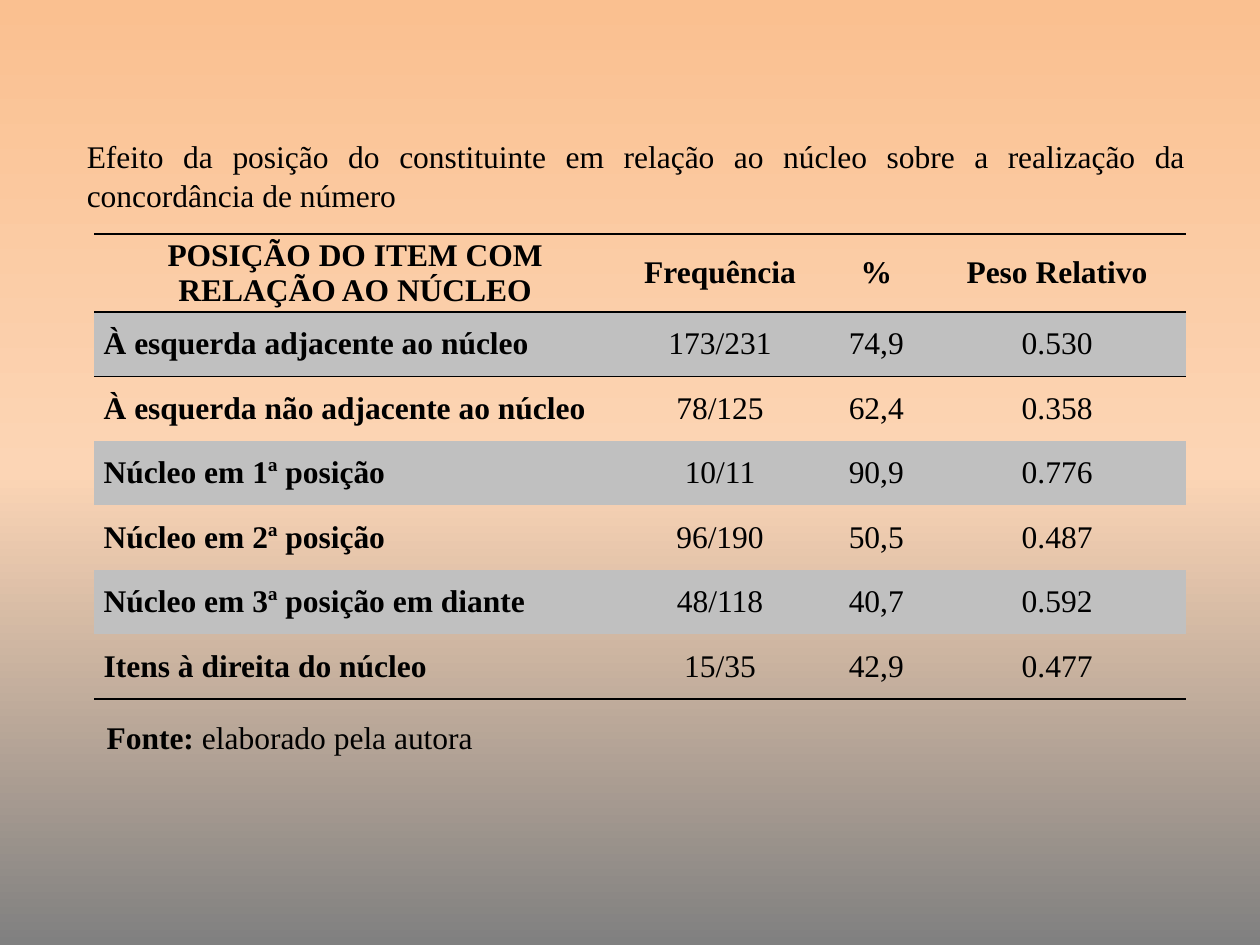
from copy import deepcopy

from lxml import etree
from pptx import Presentation
from pptx.dml.color import RGBColor
from pptx.enum.text import MSO_ANCHOR, PP_ALIGN
from pptx.oxml.ns import qn
from pptx.util import Cm, Pt

MIDDLE = MSO_ANCHOR.MIDDLE
LEFT, CENTER, JUSTIFY = PP_ALIGN.LEFT, PP_ALIGN.CENTER, PP_ALIGN.JUSTIFY

BLACK = RGBColor(0x00, 0x00, 0x00)
BAND_GRAY = RGBColor(0xC0, 0xC0, 0xC0)
GRADIENT = [
    (0, RGBColor(0xFA, 0xC0, 0x90)),
    (0.5, RGBColor(0xFC, 0xD5, 0xB5)),
    (1, RGBColor(0x80, 0x80, 0x80)),
]

FONT_NAME = "Times New Roman"
FONT_SIZE = Pt(18)
NO_STYLE_NO_GRID = "{2D5ABB26-0587-4C30-8999-92F81FD0307C}"

COLUMN_WIDTHS = [Cm(10.52), Cm(4.19), Cm(2.11), Cm(5.18)]
HEADER_HEIGHT, ROW_HEIGHT = Cm(1.57), Cm(1.3)
ROWS = [
    ("POSIÇÃO DO ITEM COM RELAÇÃO AO NÚCLEO", "Frequência", "%", "Peso Relativo"),
    ("À esquerda adjacente ao núcleo", "173/231", "74,9", "0.530"),
    ("À esquerda não adjacente ao núcleo", "78/125", "62,4", "0.358"),
    ("Núcleo em 1ª posição", "10/11", "90,9", "0.776"),
    ("Núcleo em 2ª posição", "96/190", "50,5", "0.487"),
    ("Núcleo em 3ª posição em diante", "48/118", "40,7", "0.592"),
    ("Itens à direita do núcleo", "15/35", "42,9", "0.477"),
]


def set_background(slide):
    fill = slide.background.fill
    fill.gradient()
    fill.gradient_angle = 270
    # The default gradient has two stops; a third one is added
    stop_list = slide.element.find(".//" + qn("a:gsLst"))
    stop_list.append(deepcopy(stop_list[-1]))
    for stop, (position, color) in zip(fill.gradient_stops, GRADIENT):
        stop.position = position
        stop.color.rgb = color


def style_paragraph(paragraph, alignment, bold=None):
    paragraph.alignment = alignment
    font = paragraph.font
    font.name, font.size, font.bold = FONT_NAME, FONT_SIZE, bold
    font.color.rgb = BLACK


def add_text(slide, left, top, width, height, runs, alignment=LEFT):
    """Add a one-paragraph text box; runs are (text, bold) pairs."""
    text_box = slide.shapes.add_textbox(left, top, width, height)
    text_box.text_frame.word_wrap = True
    paragraph = text_box.text_frame.paragraphs[0]
    style_paragraph(paragraph, alignment)
    for text, bold in runs:
        run = paragraph.add_run()
        run.text = text
        run.font.bold = bold
    return text_box


def add_border(cell, side):
    properties = cell._tc.get_or_add_tcPr()
    line = etree.SubElement(properties, qn("a:" + side), w=str(Pt(1)))
    fill = etree.SubElement(line, qn("a:solidFill"))
    etree.SubElement(fill, qn("a:srgbClr"), val=str(BLACK))


def fill_cell(cell, text, row, column):
    cell.text = text
    cell.vertical_anchor = MIDDLE
    cell.margin_left = cell.margin_right = Cm(0.19)
    cell.margin_top = cell.margin_bottom = 0
    is_header, is_label = row == 0, column == 0
    style_paragraph(
        cell.text_frame.paragraphs[0],
        LEFT if is_label and not is_header else CENTER,
        is_header or is_label,
    )
    # Rules around the header and below the last row
    if row <= 1:
        add_border(cell, "lnT")
    if row in (0, len(ROWS) - 1):
        add_border(cell, "lnB")
    # Gray bands on odd rows
    if row % 2:
        cell.fill.solid()
        cell.fill.fore_color.rgb = BAND_GRAY
    else:
        cell.fill.background()


def add_results_table(slide):
    heights = [HEADER_HEIGHT] + [ROW_HEIGHT] * (len(ROWS) - 1)
    frame = slide.shapes.add_table(
        len(ROWS), len(COLUMN_WIDTHS), Cm(1.9), Cm(4.72),
        sum(COLUMN_WIDTHS), sum(heights),
    )
    table = frame.table
    table.first_row = table.horz_banding = False
    frame.element.find(".//" + qn("a:tableStyleId")).text = NO_STYLE_NO_GRID
    for column, width in zip(table.columns, COLUMN_WIDTHS):
        column.width = width
    for row, height in zip(table.rows, heights):
        row.height = height
    for row, values in enumerate(ROWS):
        for column, text in enumerate(values):
            fill_cell(table.cell(row, column), text, row, column)


def main():
    presentation = Presentation()
    presentation.slide_width, presentation.slide_height = Cm(25.4), Cm(19.05)
    slide = presentation.slides.add_slide(presentation.slide_layouts[6])
    set_background(slide)

    # Title
    title = add_text(
        slide, Cm(1.5), Cm(1.93), Cm(22.66), Cm(3.18),
        [("Efeito da posição do constituinte em relação ao núcleo "
          "sobre a realização da concordância de número", False)],
        JUSTIFY,
    )
    title.text_frame.vertical_anchor = MIDDLE
    title.text_frame.paragraphs[0].line_spacing = 1.05

    add_results_table(slide)

    # Source note
    note = add_text(
        slide, Cm(1.9), Cm(14.35), Cm(22.86), Cm(1.37),
        [("Fonte: ", True), ("elaborado pela autora", False)],
    )
    note.text_frame.paragraphs[0].space_before = Pt(3.6)

    presentation.save("out.pptx")


if __name__ == "__main__":
    main()
